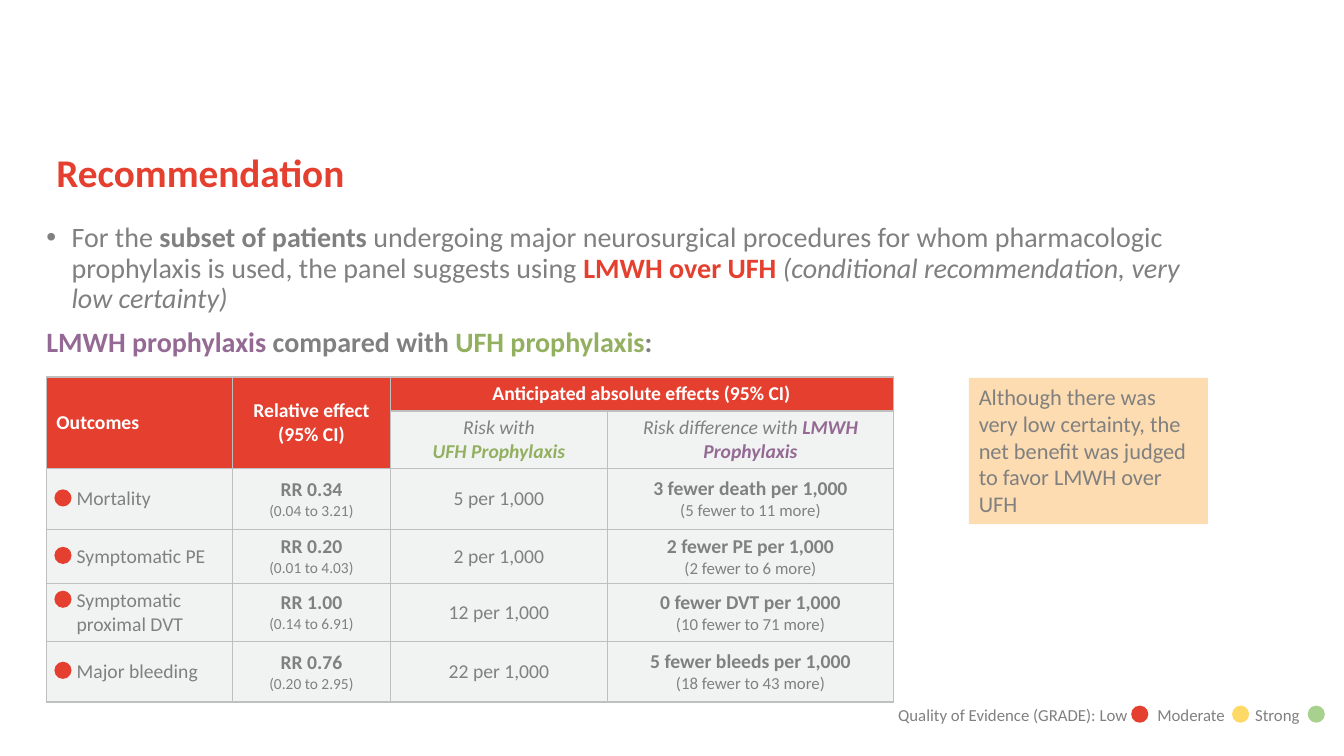
from lxml import etree
from pptx import Presentation
from pptx.dml.color import RGBColor
from pptx.enum.shapes import MSO_SHAPE
from pptx.enum.text import MSO_ANCHOR, MSO_AUTO_SIZE, PP_ALIGN
from pptx.oxml.ns import qn
from pptx.util import Inches, Pt

RECT, OVAL = MSO_SHAPE.RECTANGLE, MSO_SHAPE.OVAL
TOP, MIDDLE = MSO_ANCHOR.TOP, MSO_ANCHOR.MIDDLE
LEFT, CENTER = PP_ALIGN.LEFT, PP_ALIGN.CENTER
FIXED = MSO_AUTO_SIZE.NONE

RED = RGBColor(0xE5, 0x3F, 0x2F)
GRAY = RGBColor(0x80, 0x80, 0x80)
WHITE = RGBColor(0xFF, 0xFF, 0xFF)
PALE = RGBColor(0xF1, 0xF3, 0xF2)
EDGE = RGBColor(0xBF, 0xBF, 0xBF)
PURPLE = RGBColor(0x94, 0x6A, 0x95)
GREEN = RGBColor(0x92, 0xB0, 0x60)
PEACH = RGBColor(0xFC, 0xDC, 0xB0)
YELLOW = RGBColor(0xFF, 0xD9, 0x66)
MINT = RGBColor(0xA9, 0xD1, 0x8E)

FONT = "Calibri"
WIDE, HIGH = Inches(13.33), Inches(7.5)
EDGE_X, TABLE_Y = 3.45, 49.87
COLS = [13.88, 11.7, 16.2, 21.23]
ROWS = [4.4, 7.6, 8, 7.2, 7.6, 8]
DOT = Inches(0.17)

OUTCOMES = [
    ("Mortality", "RR 0.34", "(0.04 to 3.21)", "5 per 1,000",
     "3 fewer death per 1,000", "(5 fewer to 11 more)", 0),
    ("Symptomatic PE", "RR 0.20", "(0.01 to 4.03)", "2 per 1,000",
     "2 fewer PE per 1,000", "(2 fewer to 6 more)", 0),
    ("Symptomatic proximal DVT", "RR 1.00", "(0.14 to 6.91)", "12 per 1,000",
     "0 fewer DVT per 1,000", "(10 fewer to 71 more)", 1.6),
    ("Major bleeding", "RR 0.76", "(0.20 to 2.95)", "22 per 1,000",
     "5 fewer bleeds per 1,000", "(18 fewer to 43 more)", 0),
]


def across(n):
    return round(WIDE * n / 100)


def down(n):
    return round(HIGH * n / 100)


def area(x, y, w, h):
    return across(x), down(y), across(w), down(h)


def place(shape, x, y, w, h):
    shape.left, shape.top, shape.width, shape.height = area(x, y, w, h)


def style(run, size, color=GRAY, bold=False, slant=False):
    font = run.font
    font.name, font.size = FONT, Pt(size)
    font.bold, font.italic = bold, slant
    font.color.rgb = color


def write(para, text, *look):
    para.text = text
    for run in para.runs:
        style(run, *look)


def join(para, size, parts):
    for text, *look in parts:
        run = para.add_run()
        run.text = text
        style(run, size, *look)


def dot(slide, x, mid, color):
    mark = slide.shapes.add_shape(OVAL, across(x), down(mid) - DOT // 2, DOT, DOT)
    paint(mark, color)


def paint(shape, color):
    shape.shadow.inherit = False
    shape.fill.solid()
    shape.fill.fore_color.rgb = color
    shape.line.fill.background()


def frame(cell, color):
    props = cell._tc.get_or_add_tcPr()
    for spot, side in enumerate("LRTB"):
        line = etree.Element(qn("a:ln" + side), w=str(Pt(1)))
        fill = etree.SubElement(line, qn("a:solidFill"))
        etree.SubElement(fill, qn("a:srgbClr"), val=str(EDGE))
        props.insert(spot, line)
    cell.vertical_anchor = MIDDLE
    cell.fill.solid()
    cell.fill.fore_color.rgb = color


def label(cell, text, align, *look):
    para = cell.text_frame.paragraphs[0]
    para.alignment = align
    write(para, text, *look)


def effect(cell, main, span, size):
    label(cell, main, CENTER, 14, GRAY, True)
    para = cell.text_frame.add_paragraph()
    para.alignment = CENTER
    write(para, span, size)


def heads(grid):
    grid.cell(0, 0).merge(grid.cell(1, 0))
    grid.cell(0, 1).merge(grid.cell(1, 1))
    grid.cell(0, 2).merge(grid.cell(0, 3))
    label(grid.cell(0, 0), "Outcomes", LEFT, 14, WHITE, True)
    label(grid.cell(0, 1), "Relative effect (95% CI)", CENTER, 14, WHITE, True)
    label(grid.cell(0, 2), "Anticipated absolute effects (95% CI)", CENTER, 14, WHITE, True)
    label(grid.cell(1, 2), "Risk with\vUFH Prophylaxis", CENTER, 14, GRAY, False, True)
    style(grid.cell(1, 2).text_frame.paragraphs[0].runs[-1], 14, GREEN, True, True)
    para = grid.cell(1, 3).text_frame.paragraphs[0]
    para.alignment = CENTER
    join(para, 14, [("Risk difference with ", GRAY, False, True),
                    ("LMWH Prophylaxis", PURPLE, True, True)])


def table(slide):
    box = area(EDGE_X, TABLE_Y, sum(COLS), sum(ROWS))
    grid = slide.shapes.add_table(len(ROWS), len(COLS), *box).table
    grid.first_row = grid.horz_banding = False
    for col, size in zip(grid.columns, COLS):
        col.width = across(size)
    for row, size in zip(grid.rows, ROWS):
        row.height = down(size)
    for r in range(len(ROWS)):
        for c in range(len(COLS)):
            frame(grid.cell(r, c), RED if r == 0 or r == 1 and c < 2 else PALE)
    heads(grid)
    for r, (name, ratio, span, risk, diff, band, lift) in enumerate(OUTCOMES, 2):
        grid.cell(r, 0).margin_left = Inches(0.3)
        label(grid.cell(r, 0), name, LEFT, 14)
        effect(grid.cell(r, 1), ratio, span, 11)
        label(grid.cell(r, 2), risk, CENTER, 14)
        effect(grid.cell(r, 3), diff, band, 12)
        dot(slide, 4.05, TABLE_Y + sum(ROWS[:r]) + ROWS[r] / 2 - lift, RED)


def title(slide):
    shape = slide.shapes.title
    place(shape, EDGE_X, 19.6, 90, 10.4)
    text = shape.text_frame
    text.auto_size, text.vertical_anchor = FIXED, TOP
    para = text.paragraphs[0]
    para.alignment, para.line_spacing = LEFT, 0.9
    write(para, "Recommendation", 28, RED, True)


def bullet(para, sign, inset):
    props = para._p.get_or_add_pPr()
    props.set("marL", str(inset))
    props.set("indent", str(-inset))
    if sign:
        etree.SubElement(props, qn("a:buFont"), typeface="Arial")
        etree.SubElement(props, qn("a:buChar"), char=sign)
    else:
        etree.SubElement(props, qn("a:buNone"))


def body(slide):
    shape = slide.placeholders[1]
    place(shape, EDGE_X, 29.6, 87.47, 12)
    text = shape.text_frame
    text.auto_size, text.vertical_anchor = FIXED, TOP
    text.margin_left = text.margin_right = text.margin_top = text.margin_bottom = 0
    advice, versus = text.paragraphs[0], text.add_paragraph()
    for para, sign, inset, gap in [(advice, "•", Inches(0.25), 0), (versus, "", 0, 10)]:
        bullet(para, sign, inset)
        para.line_spacing, para.space_before = 0.9, Pt(gap)
    join(advice, 20, [
        ("For the ",), ("subset of patients ", GRAY, True),
        ("undergoing major neurosurgical procedures for whom pharmacologic "
         "prophylaxis is used, the panel suggests using ",),
        ("LMWH over UFH ", RED, True),
        ("(conditional recommendation, very low certainty)", GRAY, False, True)])
    join(versus, 20, [
        ("LMWH prophylaxis ", PURPLE, True), ("compared with ", GRAY, True),
        ("UFH prophylaxis", GREEN, True), (":", GRAY, True)])


def note(slide):
    shape = slide.shapes.add_shape(RECT, *area(72.09, 50, 17.78, 19.33))
    paint(shape, PEACH)
    text = shape.text_frame
    text.word_wrap, text.vertical_anchor = True, TOP
    para = text.paragraphs[0]
    para.alignment = LEFT
    write(para, "Although there was very low certainty, the net benefit "
          "was judged to favor LMWH over UFH", 16)


def legend(slide):
    text = slide.shapes.add_textbox(*area(66.09, 92.53, 33.9, 4)).text_frame
    text.word_wrap = True
    para = text.paragraphs[0]
    tabs = etree.SubElement(para._p.get_or_add_pPr(), qn("a:tabLst"))
    for stop in (2.57, 3.54):
        etree.SubElement(tabs, qn("a:tab"), pos=str(Inches(stop)), algn="l")
    write(para, "Quality of Evidence (GRADE): Low\tModerate\tStrong", 12)
    for x, color in [(84.17, RED), (91.67, YELLOW), (97.3, MINT)]:
        dot(slide, x, 94.47, color)


def main():
    deck = Presentation()
    deck.slide_width, deck.slide_height = WIDE, HIGH
    slide = deck.slides.add_slide(deck.slide_layouts[1])
    for part in (table, note, title, body, legend):
        part(slide)
    deck.save("out.pptx")


if __name__ == "__main__":
    main()
